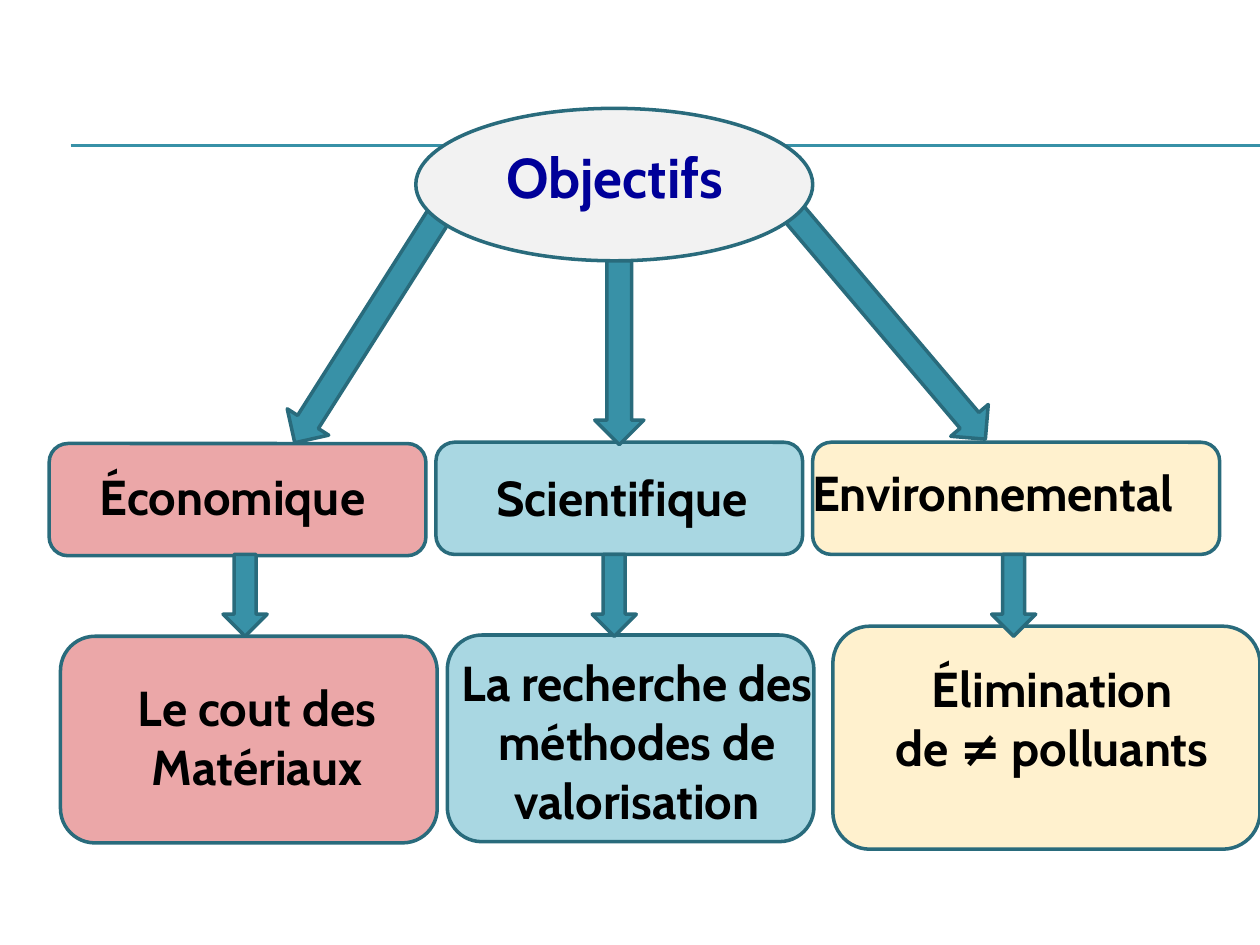
from dataclasses import dataclass

from lxml.etree import SubElement
from pptx import Presentation
from pptx.dml.color import RGBColor
from pptx.enum.shapes import MSO_CONNECTOR, MSO_SHAPE
from pptx.enum.text import PP_ALIGN
from pptx.oxml.ns import qn
from pptx.util import Inches, Pt

TEAL = RGBColor(0x38, 0x91, 0xA7)
DARK_TEAL = RGBColor(0x29, 0x6B, 0x7C)
GREY = RGBColor(0xF2, 0xF2, 0xF2)
NAVY = RGBColor(0x00, 0x00, 0x99)
BLACK = RGBColor(0x00, 0x00, 0x00)
PINK = RGBColor(0xEB, 0xA7, 0xA8)
BLUE = RGBColor(0xA9, 0xD7, 0xE2)
CREAM = RGBColor(0xFF, 0xF1, 0xCE)

# The page is a grid of 100 columns by 75 rows
COLUMNS, ROWS = 100, 75

deck = Presentation()
deck.slide_width, deck.slide_height = Inches(10), Inches(7.5)
page = deck.slides.add_slide(deck.slide_layouts[6])


@dataclass(frozen=True)
class Area:
    column: float
    row: float
    columns: float
    rows: float

    def lengths(self) -> tuple:
        across, down = deck.slide_width / COLUMNS, deck.slide_height / ROWS
        return (round(self.column * across), round(self.row * down),
                round(self.columns * across), round(self.rows * down))


@dataclass(frozen=True)
class Label:
    area: Area
    lines: tuple
    align: PP_ALIGN = PP_ALIGN.CENTER
    size: int = 28
    color: RGBColor = BLACK


@dataclass(frozen=True)
class Branch:
    color: RGBColor
    heading_box: Area
    heading: Label
    detail_box: Area
    detail: Label
    arrow_column: float


def draw_shape(kind: MSO_SHAPE, area: Area, color: RGBColor, angle: float = 0) -> None:
    shape = page.shapes.add_shape(kind, *area.lengths())
    shape.shadow.inherit = False
    shape.rotation = angle
    shape.fill.solid()
    shape.fill.fore_color.rgb = color
    shape.line.color.rgb = DARK_TEAL
    shape.line.width = Pt(2)


def draw_arrow(area: Area, angle: float = 0) -> None:
    draw_shape(MSO_SHAPE.DOWN_ARROW, area, TEAL, angle)


def draw_label(label: Label) -> None:
    frame = page.shapes.add_textbox(*label.area.lengths()).text_frame
    frame.word_wrap = True
    font_format = {"name": "Cabin", "size": Pt(label.size), "bold": True}
    for index, line in enumerate(label.lines):
        para = frame.add_paragraph() if index else frame.paragraphs[0]
        para.alignment = label.align
        span = para.add_run()
        span.text = line
        for name, value in font_format.items():
            setattr(span.font, name, value)
        span.font.color.rgb = label.color


def draw_rule(row: float) -> None:
    left, top, width, _ = Area(5.6, row, 94.4, 0).lengths()
    rule = page.shapes.add_connector(MSO_CONNECTOR.STRAIGHT, left, top, left + width, top)
    rule.line.color.rgb = TEAL
    rule.line.width = Pt(0.75)
    SubElement(rule._element.spPr, qn("a:effectLst"))


BRANCHES = (
    Branch(PINK, Area(3.9, 35.2, 29.9, 8.9),
           Label(Area(4.8, 36.5, 27.3, 5.7), ("Économique",)),
           Area(4.8, 50.5, 29.9, 16.4),
           Label(Area(5.5, 53.3, 29.8, 10.7), ("Le cout des Matériaux",)), 17.7),
    Branch(BLUE, Area(34.6, 35.1, 29.1, 8.9),
           Label(Area(35.3, 36.6, 28.1, 5.7), ("Scientifique",)),
           Area(35.5, 50.4, 29.1, 16.4),
           Label(Area(35.6, 51.3, 29.9, 15.1),
                 ("La recherche des méthodes de valorisation",)), 47),
    Branch(CREAM, Area(64.5, 35.1, 32.3, 8.9),
           Label(Area(63.5, 36.2, 34.6, 5.7), ("Environnemental",), PP_ALIGN.LEFT),
           Area(66.1, 49.7, 33.9, 17.7),
           Label(Area(67, 51.8, 33, 10.4), ("Élimination", "de ≠ polluants")), 78.7),
)

# Double rule behind the title
for rule_row in (11.5, 11.6):
    draw_rule(rule_row)

# Title ellipse over the slanted arrows
draw_arrow(Area(68.5, 13.7, 3.9, 24), 319.7)
draw_arrow(Area(27.5, 14.3, 3.9, 22.6), 32.4)
draw_shape(MSO_SHAPE.OVAL, Area(33, 8.6, 31.5, 12.1), GREY)
draw_label(Label(Area(37, 10.8, 23.6, 9.7), ("Objectifs",), size=32, color=NAVY))

# One column per objective: heading, detail and the arrow between them
for branch in BRANCHES:
    draw_shape(MSO_SHAPE.ROUNDED_RECTANGLE, branch.heading_box, branch.color)
    draw_label(branch.heading)
    draw_shape(MSO_SHAPE.ROUNDED_RECTANGLE, branch.detail_box, branch.color)
    draw_label(branch.detail)
    draw_arrow(Area(branch.arrow_column, 44, 3.5, 6.5))

# Central arrow, ending over its heading
draw_arrow(Area(47.2, 20.7, 3.9, 14.6))

deck.save("out.pptx")
